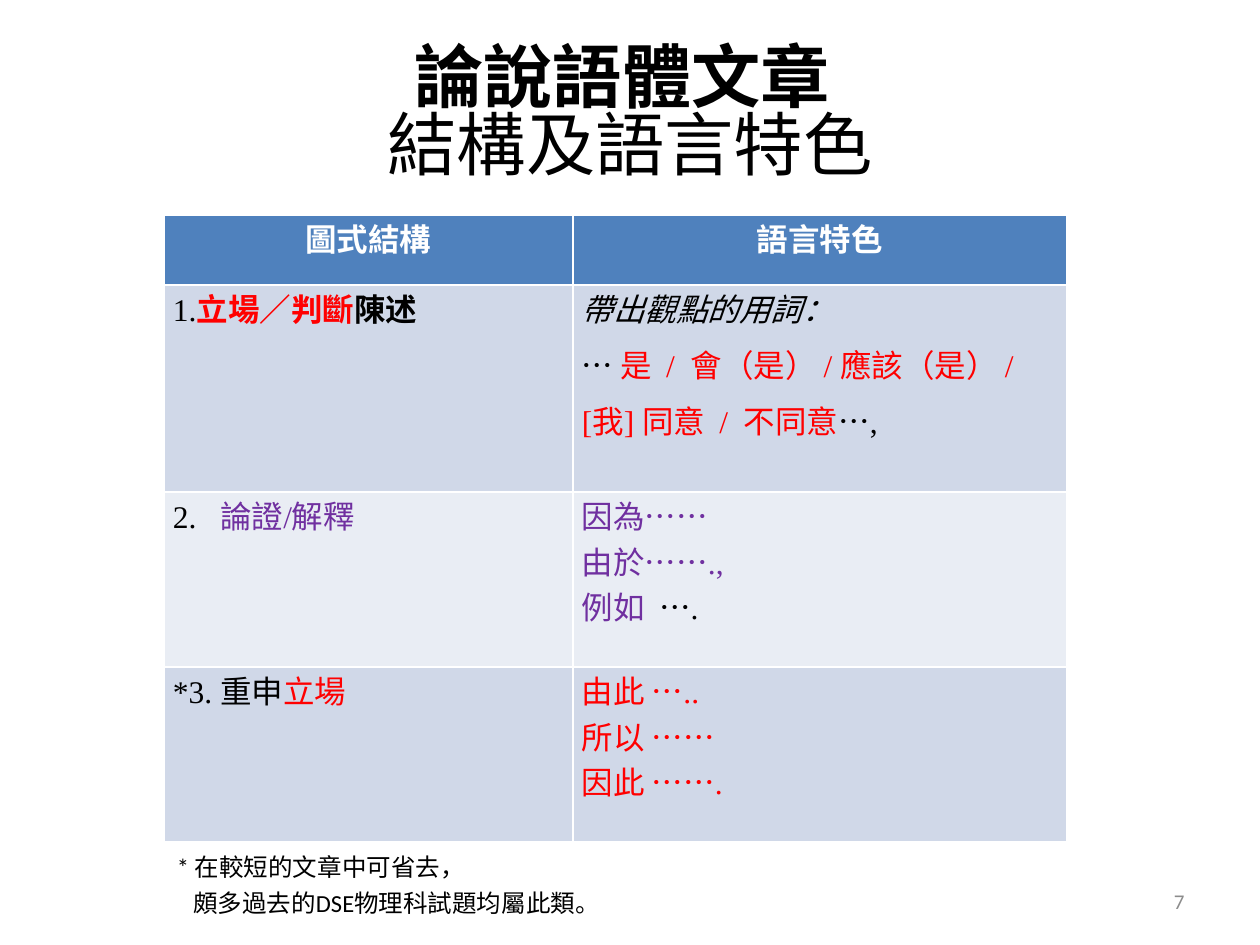
import pptx
import pptx.util
import pptx.dml.color
import pptx.enum.text
import pptx.oxml
import pptx.oxml.ns
from dataclasses import dataclass
from lxml import etree

PX = 914400 / 126
ALIGN = pptx.enum.text.PP_ALIGN
MIDDLE = pptx.enum.text.MSO_ANCHOR.MIDDLE


@dataclass(frozen=True)
class Theme:
    sans: str = "Calibri"
    serif: str = "Times New Roman"
    black: str = "000000"
    white: str = "FFFFFF"
    red: str = "FF0000"
    purple: str = "7030A0"
    grey: str = "8C8C8C"
    header: str = "4F81BD"
    band_dark: str = "D0D8E8"
    band_light: str = "E9EDF4"
    title_size: float = 39.6
    body_size: int = 18
    note_size: int = 14
    number_size: int = 12


T = Theme()
RED = {"color": T.red}
PURPLE = {"color": T.purple}
SANS = {"font": T.sans}


def px(n):
    return pptx.util.Emu(round(n * PX))


def rgb(value):
    return pptx.dml.color.RGBColor.from_string(value)


def add_run(p, text, *, size=T.body_size, font=T.serif, color=T.black, bold=False, italic=False):
    r = p.add_run()
    r.text = text
    r.font.size = pptx.util.Pt(size)
    r.font.name = font
    r.font.bold = bold
    r.font.italic = italic
    r.font.color.rgb = rgb(color)


def write(tf, paragraphs, *, align=ALIGN.LEFT, spacing=None, after=0, **fmt):
    """Fill a text frame; each paragraph is a list of (text, format overrides)."""
    for i, runs in enumerate(paragraphs):
        p = tf.paragraphs[0] if i == 0 else tf.add_paragraph()
        p.alignment = align
        p.space_before = pptx.util.Pt(0)
        p.space_after = pptx.util.Pt(after)
        if spacing is not None:
            p.line_spacing = spacing
        for text, extra in runs:
            add_run(p, text, **{**fmt, **extra})


def style_cell(cell, fill, margins=(9, 0)):
    cell.fill.solid()
    cell.fill.fore_color.rgb = rgb(fill)
    cell.margin_left = cell.margin_right = px(margins[0])
    cell.margin_top = cell.margin_bottom = px(margins[1])
    tc_pr = cell._tc.get_or_add_tcPr()
    for i, side in enumerate(("lnL", "lnR", "lnT", "lnB")):
        ln = pptx.oxml.parse_xml(
            f'<a:{side} {pptx.oxml.ns.nsdecls("a")} w="12700"><a:solidFill>'
            f'<a:srgbClr val="{T.white}"/></a:solidFill></a:{side}>')
        tc_pr.insert(i, ln)


def add_title(s):
    title = s.shapes.title
    title.left, title.top, title.width, title.height = map(px, (63, 38, 1134, 157))
    tf = title.text_frame
    tf.auto_size = pptx.enum.text.MSO_AUTO_SIZE.NONE
    tf.vertical_anchor = MIDDLE
    p = tf.paragraphs[0]
    p.alignment = ALIGN.CENTER
    p.line_spacing = 0.82
    add_run(p, "論說語體文章 ", size=T.title_size, font=T.sans, bold=True)
    p.add_line_break()
    add_run(p, "結構及語言特色", size=T.title_size)


def add_structure_table(s):
    widths, heights = (409, 494), (70, 207, 175, 175, 70)
    frame = s.shapes.add_table(len(heights), len(widths), px(164), px(215),
                               px(sum(widths)), px(sum(heights)))
    table = frame.table
    table.horz_banding = False
    for col, w in zip(table.columns, widths):
        col.width = px(w)
    for row, h in zip(table.rows, heights):
        row.height = px(h)

    for cell, text in zip(table.rows[0].cells, ("圖式結構", "語言特色")):
        style_cell(cell, T.header)
        cell.vertical_anchor = MIDDLE
        write(cell.text_frame, [[(text, {})]], align=ALIGN.CENTER,
              spacing=pptx.util.Pt(12), font=T.sans, color=T.white, bold=True)

    # fill, space after, left paragraphs, right paragraphs
    body = [
        (T.band_dark, 6,
         [[("1.", {}), ("立場／判斷", {**RED, "bold": True}), ("陳述", {"bold": True})]],
         [[("帶出觀點的用詞：", {"italic": True})],
          [("… ", {}), ("是  /  會（是） / 應該（是） /", RED)],
          [("[我] 同意  /  不同意", RED), ("…,", {})]]),
        (T.band_light, 0,
         [[("2.   ", {}), ("論證/解釋", PURPLE)]],
         [[("因為……", PURPLE)],
          [("由於", {**PURPLE, **SANS}), ("…….,", PURPLE)],
          [("例如  ", {**PURPLE, **SANS}), ("….", {})]]),
        (T.band_dark, 0,
         [[("*3. ", {}), ("重申", SANS), ("立場", {**RED, **SANS})]],
         [[("由此 ", {**RED, **SANS}), ("…..", RED)],
          [("所以 ……", RED)],
          [("因此 ", {**RED, **SANS}), ("…….", RED)]]),
    ]
    for i, (fill, after, *columns) in enumerate(body, start=1):
        for cell, paragraphs in zip(table.rows[i].cells, columns):
            style_cell(cell, fill)
            write(cell.text_frame, paragraphs, after=after)

    note = table.cell(4, 0)
    note.merge(table.cell(4, 1))
    style_cell(note, T.white, (13, 6))
    write(note.text_frame, [[("* 在較短的文章中可省去，", {})],
                            [("頗多過去的DSE物理科試題均屬此類。", {})]],
          size=T.note_size, font=T.sans)
    p_pr = note.text_frame.paragraphs[1]._p.get_or_add_pPr()
    p_pr.set("marL", str(px(16)))


def add_page_number(s):
    tf = s.shapes.add_textbox(px(903), px(876), px(294), px(50)).text_frame
    tf.word_wrap = True
    tf.vertical_anchor = MIDDLE
    write(tf, [[("7", {})]], align=ALIGN.RIGHT, size=T.number_size,
          font=T.sans, color=T.grey)


def main():
    prs = pptx.Presentation()
    prs.slide_width, prs.slide_height = px(1260), px(945)
    s = prs.slides.add_slide(prs.slide_layouts[5])
    add_title(s)
    add_structure_table(s)
    add_page_number(s)
    prs.save("out.pptx")


if __name__ == "__main__":
    main()
